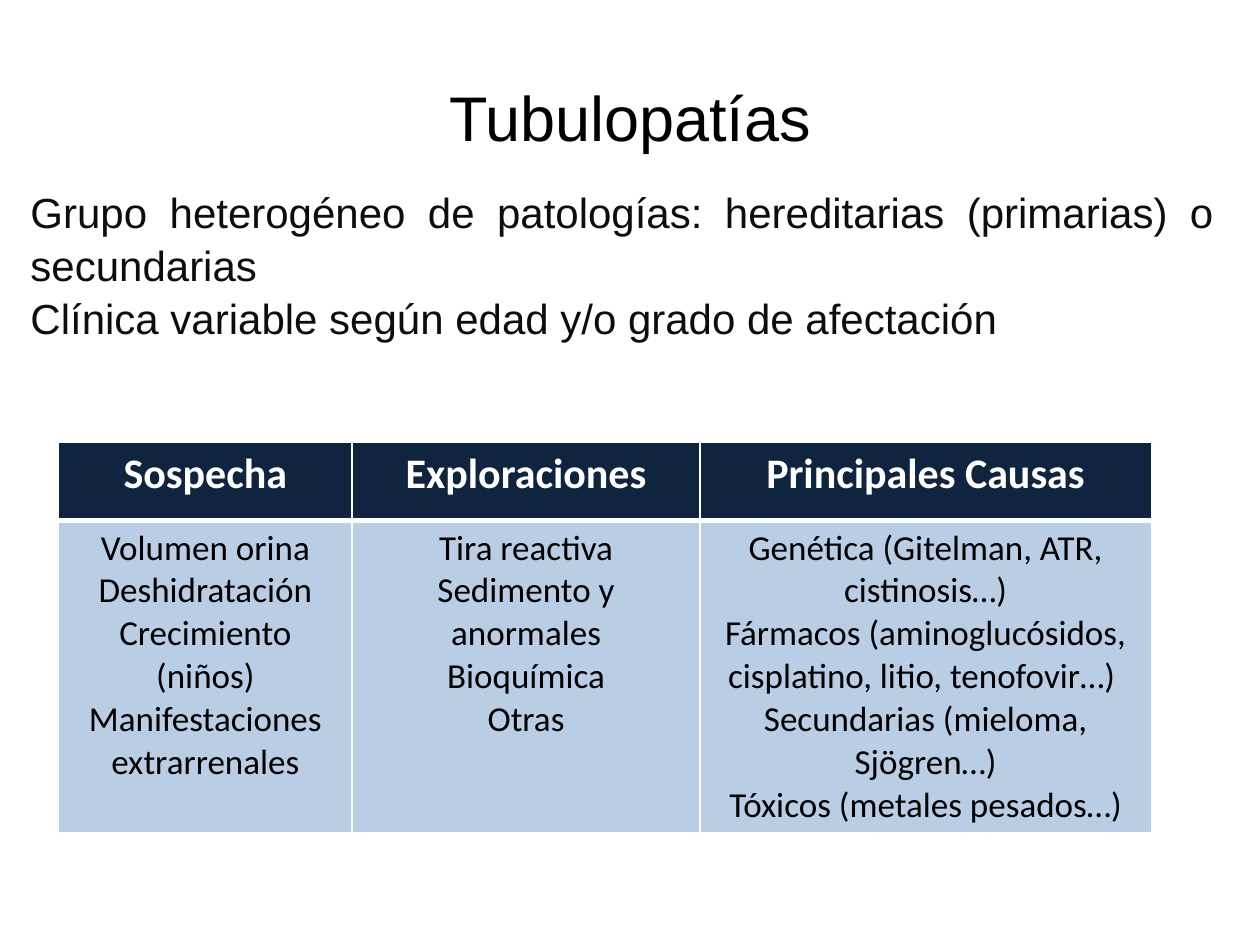
import pptx
import pptx.dml.color
import pptx.enum.text
import pptx.oxml.ns
import pptx.util
from lxml import etree
from pptx.util import Cm

COLORS = {
    "title": "000000",
    "intro": "0D0D0D",
    "header_fill": "0F243E",
    "header_text": "FFFFFF",
    "body_fill": "B9CDE5",
    "body_text": "000000",
    "border": "FFFFFF",
}
ALIGN = pptx.enum.text.PP_ALIGN
INTRO = [
    "Grupo heterogéneo de patologías: hereditarias (primarias) o secundarias",
    "Clínica variable según edad y/o grado de afectación",
]
COLUMNS = [
    ("Sospecha", 5.92, [
        "Volumen orina",
        "Deshidratación",
        "Crecimiento (niños)",
        "Manifestaciones extrarrenales",
    ]),
    ("Exploraciones", 7.01, [
        "Tira reactiva",
        "Sedimento y anormales",
        "Bioquímica",
        "Otras",
    ]),
    ("Principales Causas", 9.1, [
        "Genética (Gitelman, ATR, cistinosis…)",
        "Fármacos (aminoglucósidos, cisplatino, litio, tenofovir…) ",
        "Secundarias (mieloma, Sjögren…)",
        "Tóxicos (metales pesados…)",
    ]),
]
HEADER_HEIGHT, BODY_HEIGHT = 1.57, 6.2


def rgb(name):
    return pptx.dml.color.RGBColor.from_string(COLORS[name])


def write_lines(frame, lines, font, size, color, align, bold=False):
    for index, line in enumerate(lines):
        paragraph = frame.paragraphs[0] if index == 0 else frame.add_paragraph()
        paragraph.alignment = align
        run = paragraph.add_run()
        run.text = line
        run.font.name = font
        run.font.size = pptx.util.Pt(size)
        run.font.bold = bold
        run.font.color.rgb = rgb(color)


def place(placeholder, left, top, width, height):
    placeholder.left, placeholder.top = Cm(left), Cm(top)
    placeholder.width, placeholder.height = Cm(width), Cm(height)
    placeholder.text_frame.word_wrap = True
    placeholder.text_frame.auto_size = pptx.enum.text.MSO_AUTO_SIZE.NONE
    return placeholder.text_frame


def add_title(slide):
    title = place(slide.shapes.title, 1.27, 0.76, 22.86, 3.18)
    title.vertical_anchor = pptx.enum.text.MSO_ANCHOR.MIDDLE
    write_lines(title, ["Tubulopatías"], "Arial", 36, "title", ALIGN.CENTER)


def add_intro(slide):
    intro = place(slide.placeholders[1], 0.36, 3.58, 24.36, 3.73)
    write_lines(intro, INTRO, "Arial", 24, "intro", ALIGN.JUSTIFY)
    for paragraph in intro.paragraphs:
        paragraph.space_before = pptx.util.Pt(0)
        paragraph.line_spacing = 1.05
        properties = paragraph._p.get_or_add_pPr()
        properties.set("marL", "0")
        properties.set("indent", "0")
        etree.SubElement(properties, pptx.oxml.ns.qn("a:buNone"))


def set_borders(cell, widths):
    properties = cell._tc.get_or_add_tcPr()
    for side, width in widths.items():
        border = etree.SubElement(properties, pptx.oxml.ns.qn(f"a:ln{side}"), w=str(pptx.util.Pt(width)))
        fill = etree.SubElement(border, pptx.oxml.ns.qn("a:solidFill"))
        etree.SubElement(fill, pptx.oxml.ns.qn("a:srgbClr"), val=COLORS["border"])


def fill_cell(cell, lines, size, part, borders, bold=False):
    set_borders(cell, borders)
    cell.fill.solid()
    cell.fill.fore_color.rgb = rgb(f"{part}_fill")
    write_lines(cell.text_frame, lines, "Calibri", size, f"{part}_text", ALIGN.CENTER, bold)


def add_findings_table(slide):
    total_width = sum(width for _, width, _ in COLUMNS)
    findings = slide.shapes.add_table(
        2, len(COLUMNS), Cm(1.18), Cm(8.92), Cm(total_width), Cm(HEADER_HEIGHT + BODY_HEIGHT)
    ).table
    findings.rows[0].height = Cm(HEADER_HEIGHT)
    findings.rows[1].height = Cm(BODY_HEIGHT)
    for index, (heading, width, entries) in enumerate(COLUMNS):
        findings.columns[index].width = Cm(width)
        fill_cell(findings.cell(0, index), [heading], 24, "header",
                  {"L": 1, "R": 1, "T": 1, "B": 3}, bold=True)
        fill_cell(findings.cell(1, index), entries, 20, "body",
                  {"L": 1, "R": 1, "T": 3, "B": 1})


def main():
    presentation = pptx.Presentation()
    presentation.slide_width, presentation.slide_height = Cm(25.4), Cm(19.05)
    slide = presentation.slides.add_slide(presentation.slide_layouts[1])
    add_title(slide)
    add_intro(slide)
    add_findings_table(slide)
    presentation.save("out.pptx")


if __name__ == "__main__":
    main()
